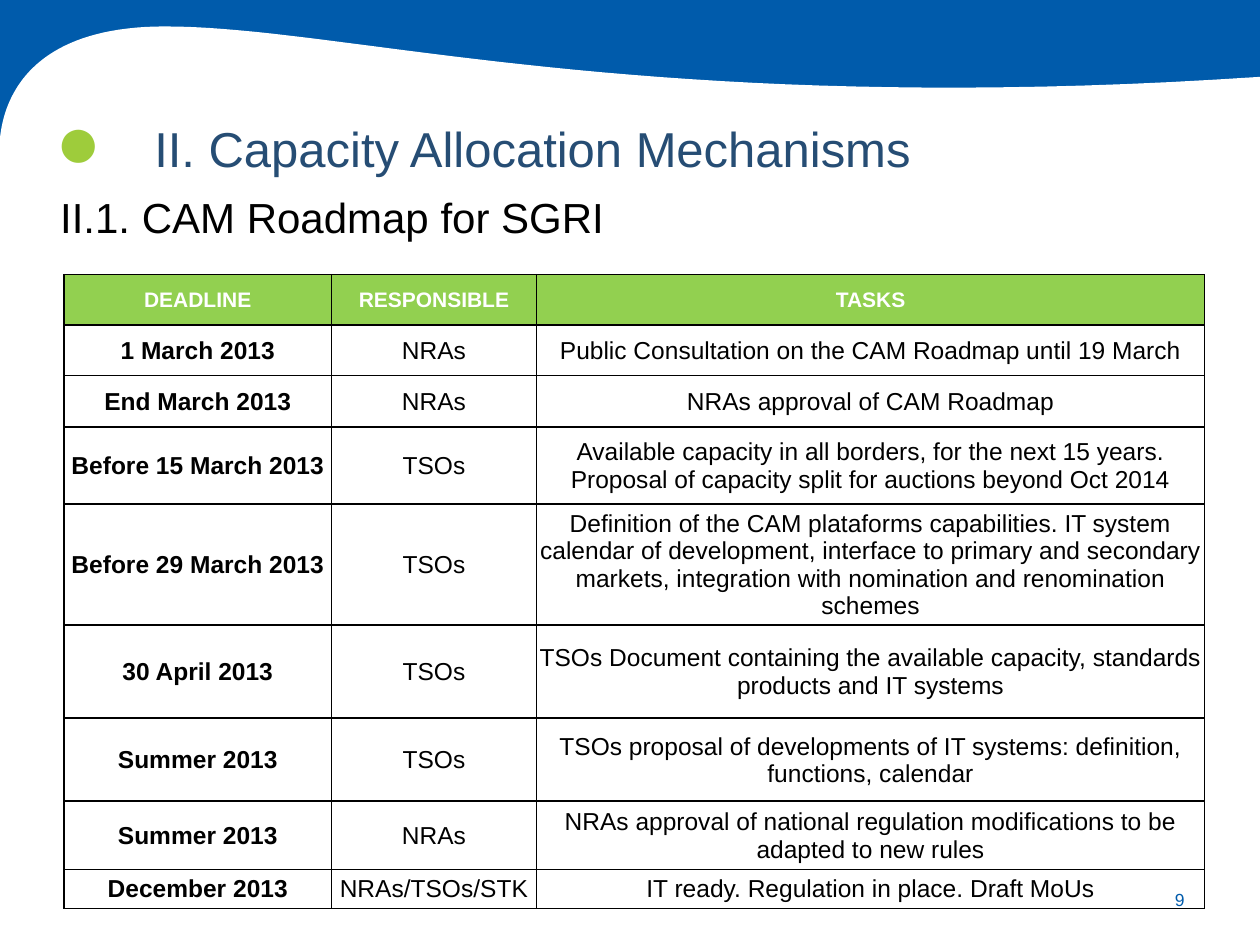
import dataclasses

import lxml.etree
import pptx
import pptx.dml.color
import pptx.enum.shapes
import pptx.enum.text
import pptx.oxml.ns
import pptx.util

Inches = pptx.util.Inches
Pt = pptx.util.Pt
RGB = pptx.dml.color.RGBColor.from_string
Align = pptx.enum.text.PP_ALIGN
Anchor = pptx.enum.text.MSO_ANCHOR
Fit = pptx.enum.text.MSO_AUTO_SIZE
qn = pptx.oxml.ns.qn


@dataclasses.dataclass(frozen=True)
class Theme:
    font: str = "Arial"
    blue: str = "005BAB"
    navy: str = "264D74"
    lime: str = "9ECC3B"
    green: str = "92D050"
    black: str = "000000"
    white: str = "FFFFFF"
    dot: int = 44
    title: int = 28
    lead: int = 24
    cell: int = 14
    head: int = 12
    small: int = 10


THEME = Theme()

WIDTH, HEIGHT = 10, 7.5
COLS = [2.12, 1.63, 5.3]
ROWS = [0.4, 0.4, 0.41, 0.61, 0.96, 0.74, 0.66, 0.54, 0.31]
TABLE = [
    ("DEADLINE", "RESPONSIBLE", "TASKS"),
    ("1 March 2013", "NRAs", "Public Consultation on the CAM Roadmap until 19 March"),
    ("End March 2013", "NRAs", "NRAs approval of CAM Roadmap"),
    ("Before 15 March 2013", "TSOs",
     "Available capacity in all borders, for the next 15 years. "
     "Proposal of capacity split for auctions beyond Oct 2014"),
    ("Before 29 March 2013", "TSOs",
     "Definition of the CAM plataforms capabilities. IT system calendar of "
     "development, interface to primary and secondary markets, integration "
     "with nomination and renomination schemes"),
    ("30 April 2013", "TSOs",
     "TSOs Document containing the available capacity, standards products "
     "and IT systems"),
    ("Summer 2013", "TSOs",
     "TSOs proposal of developments of IT systems: definition, functions, calendar"),
    ("Summer 2013", "NRAs",
     "NRAs approval of national regulation modifications to be adapted to new rules"),
    ("December 2013", "NRAs/TSOs/STK", "IT ready. Regulation in place. Draft MoUs"),
]
# Each curve: start, two control points, end
WAVE = [
    [(0, 1.1), (0.03, 0.79), (0.23, 0.21), (1.31, 0.21)],
    [(1.31, 0.21), (2.76, 0.21), (5.1, 0.94), (10, 0.61)],
]


def write(frame, text, size, color, bold=False, align=Align.LEFT,
          hang=False, line=None, after=0):
    """Put one formatted paragraph into a text frame."""
    para = frame.paragraphs[0]
    para.text = text
    para.alignment = align
    para.space_before, para.space_after = Pt(0), Pt(after)
    if line:
        para.line_spacing = line
    if hang:
        props = para._p.get_or_add_pPr()
        props.set("marL", str(Inches(0.39)))
        props.set("indent", str(Inches(-0.29)))
    font = para.runs[0].font
    font.name, font.size, font.bold = THEME.font, Pt(size), bold
    font.color.rgb = RGB(color)


def trace(curve, steps=40):
    """Return points along a cubic curve, in EMU."""
    points = []
    for step in range(steps + 1):
        t = step / steps
        parts = [(1 - t) ** 3, 3 * t * (1 - t) ** 2, 3 * t * t * (1 - t), t ** 3]
        points.append(tuple(
            Inches(sum(part * point[axis] for part, point in zip(parts, curve)))
            for axis in (0, 1)))
    return points


class Page:
    def __init__(self, deck, theme):
        self.theme = theme
        self.slide = deck.slides.add_slide(deck.slide_layouts[5])
        self.shapes = self.slide.shapes

    def paint(self, shape, color):
        shape.shadow.inherit = False
        shape.fill.solid()
        shape.fill.fore_color.rgb = RGB(color)
        shape.line.fill.background()

    def band(self, left, top, width, height, color):
        kind = pptx.enum.shapes.MSO_SHAPE.RECTANGLE
        self.paint(self.shapes.add_shape(
            kind, Inches(left), Inches(top), Inches(width), Inches(height)), color)

    def wave(self, curves, color):
        points = [point for curve in curves for point in trace(curve)]
        points += [(Inches(WIDTH), Inches(HEIGHT)), (0, Inches(HEIGHT))]
        build = self.shapes.build_freeform(*points[0], scale=1.0)
        build.add_line_segments(points[1:], close=True)
        self.paint(build.convert_to_shape(), color)

    def title(self, left, top, width, height, text, **style):
        shape = self.shapes.title
        self.shapes._spTree.append(shape._element)  # in front of the wave
        shape.left, shape.top = Inches(left), Inches(top)
        shape.width, shape.height = Inches(width), Inches(height)
        frame = shape.text_frame
        frame.auto_size = Fit.SHAPE_TO_FIT_TEXT
        frame.vertical_anchor = Anchor.TOP
        write(frame, text, **style)

    def label(self, left, top, width, height, text, anchor=Anchor.TOP,
              side=0.1, **style):
        frame = self.shapes.add_textbox(
            Inches(left), Inches(top), Inches(width), Inches(height)).text_frame
        frame.word_wrap = True
        frame.vertical_anchor = anchor
        frame.margin_left = frame.margin_right = Inches(side)
        write(frame, text, **style)

    def edge(self, cell):
        props = cell._tc.get_or_add_tcPr()
        for place, name in enumerate(("lnL", "lnR", "lnT", "lnB")):
            line = lxml.etree.Element(qn("a:" + name), w=str(Pt(1)))
            fill = lxml.etree.SubElement(line, qn("a:solidFill"))
            lxml.etree.SubElement(fill, qn("a:srgbClr"), val=self.theme.black)
            props.insert(place, line)

    def table(self, left, top, cols, rows, data):
        look = self.theme
        grid = self.shapes.add_table(
            len(rows), len(cols), Inches(left), Inches(top),
            Inches(sum(cols)), Inches(sum(rows))).table
        grid.first_row = grid.horz_banding = False
        for col, width in zip(grid.columns, cols):
            col.width = Inches(width)
        for row, height in zip(grid.rows, rows):
            row.height = Inches(height)
        for r, texts in enumerate(data):
            for c, text in enumerate(texts):
                cell = grid.cell(r, c)
                cell.vertical_anchor = Anchor.MIDDLE
                if r == 0:
                    cell.fill.solid()
                    cell.fill.fore_color.rgb = RGB(look.green)
                    size, color = look.head, look.white
                else:
                    cell.fill.background()
                    cell.margin_left = cell.margin_right = Inches(0.01)
                    cell.margin_top, cell.margin_bottom = Inches(0.01), 0
                    size, color = look.cell, look.black
                write(cell.text_frame, text, size, color,
                      bold=r == 0 or c == 0, align=Align.CENTER)
                self.edge(cell)


def main():
    deck = pptx.Presentation()
    deck.slide_width, deck.slide_height = Inches(WIDTH), Inches(HEIGHT)
    page = Page(deck, THEME)

    # Blue header with a white wave below it
    page.band(0, 0, WIDTH, 1.15, THEME.blue)
    page.wave(WAVE, THEME.white)

    # Page number and title dot
    page.label(8.94, 6.94, 0.56, 0.4, "9", anchor=Anchor.MIDDLE,
               size=THEME.small, color=THEME.blue, align=Align.RIGHT)
    page.label(0.35, 0.57, 0.55, 0.94, "●", anchor=Anchor.BOTTOM, side=0,
               size=THEME.dot, color=THEME.lime, align=Align.CENTER)

    # Headings
    heading = dict(hang=True, line=1.2, after=2)
    page.title(-0.2, 0.8, 8.75, 0.67, "II. Capacity Allocation Mechanisms",
               size=THEME.title, color=THEME.navy, align=Align.CENTER, **heading)
    page.label(0.28, 1.39, 9.53, 0.59, "II.1. CAM Roadmap for SGRI",
               size=THEME.lead, color=THEME.black, **heading)

    # Roadmap table
    page.table(0.51, 2.18, COLS, ROWS, TABLE)

    deck.save("out.pptx")


if __name__ == "__main__":
    main()
